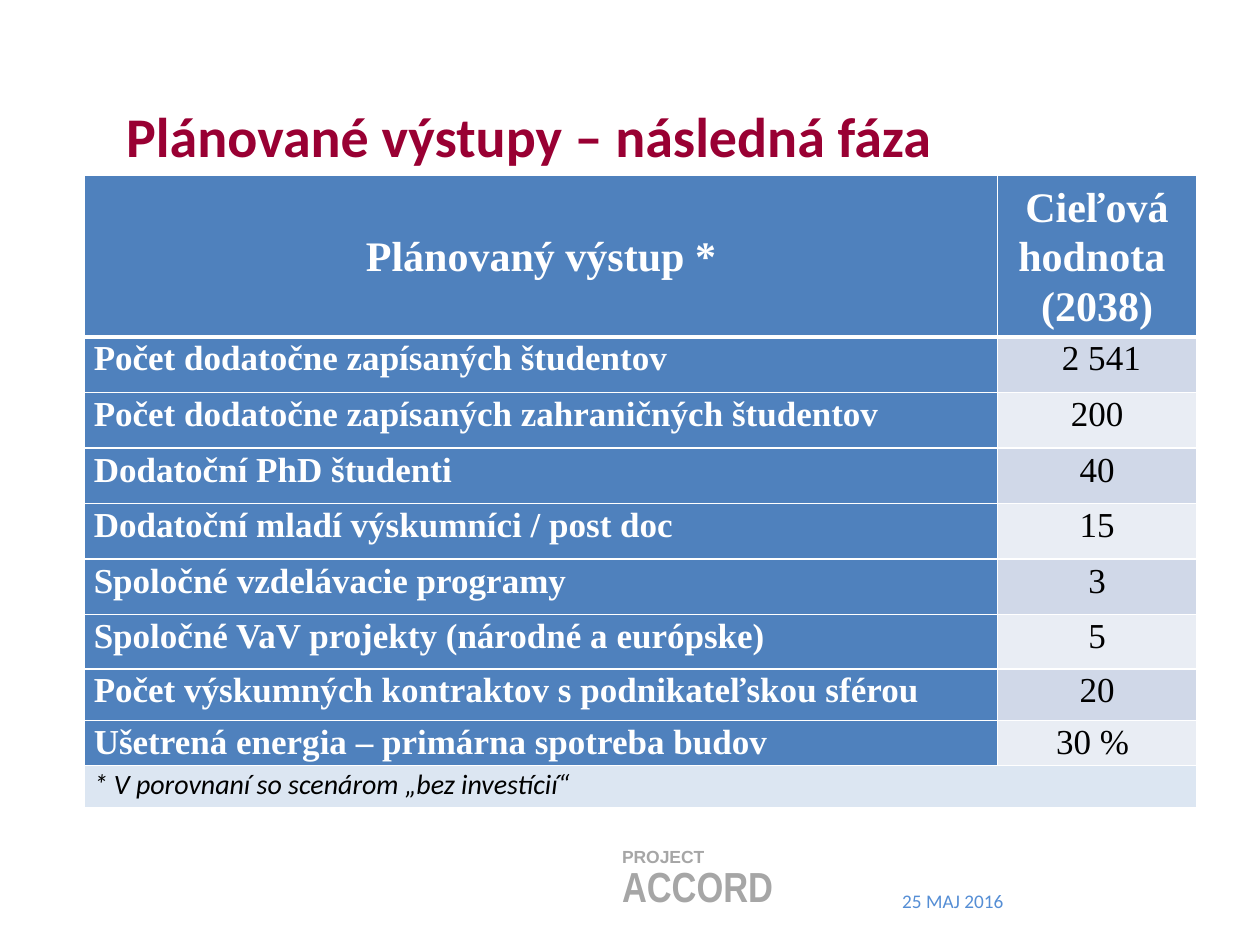
from dataclasses import dataclass

from lxml import etree
from pptx import Presentation
from pptx.dml.color import RGBColor
from pptx.enum.text import MSO_ANCHOR, MSO_AUTO_SIZE, PP_ALIGN
from pptx.oxml.ns import qn
from pptx.util import Cm, Pt

LEFT, CENTER = PP_ALIGN.LEFT, PP_ALIGN.CENTER
TOP, MIDDLE = MSO_ANCHOR.TOP, MSO_ANCHOR.MIDDLE
GROW = MSO_AUTO_SIZE.SHAPE_TO_FIT_TEXT
TITLE_ONLY = 5


@dataclass(frozen=True)
class Style:
    size: float
    face: str
    color: str
    bold: bool = False
    italic: bool = False


@dataclass(frozen=True)
class Theme:
    title: Style = Style(32, "Calibri", "990033", bold=True)
    header: Style = Style(24, "Times New Roman", "FFFFFF", bold=True)
    output: Style = Style(20, "Times New Roman", "FFFFFF", bold=True)
    target: Style = Style(20, "Times New Roman", "000000")
    footnote: Style = Style(16, "Calibri", "000000", italic=True)
    date: Style = Style(11, "Calibri", "558ED5")
    project: Style = Style(10, "Arial", "A6A6A6", bold=True)
    acronym: Style = Style(24, "Arial Narrow", "A6A6A6", bold=True)
    strong_fill: str = "4F81BD"
    band_fills: tuple = ("D0D8E8", "E9EDF4")
    footnote_fill: str = "DCE6F2"
    border: str = "FFFFFF"


@dataclass(frozen=True)
class Box:
    left: float
    top: float
    width: float
    height: float

    def emu(self):
        return Cm(self.left), Cm(self.top), Cm(self.width), Cm(self.height)


THEME = Theme()
HEADER = ("Plánovaný výstup *", "Cieľová hodnota \n(2038)")
OUTPUTS = (
    ("Počet dodatočne zapísaných študentov", " 2 541"),
    ("Počet dodatočne zapísaných zahraničných študentov", "200"),
    ("Dodatoční PhD študenti", "40"),
    ("Dodatoční mladí výskumníci / post doc", "15"),
    ("Spoločné vzdelávacie programy", "3"),
    ("Spoločné VaV projekty (národné a európske)", "5"),
    ("Počet výskumných kontraktov s podnikateľskou sférou", "20"),
    ("Ušetrená energia – primárna spotreba budov", "30 % "),
)
FOOTNOTE = "* V porovnaní so scenárom „bez investícií“"
ROW_HEIGHTS = (2.67, *[1.12] * 5, 1.09, 1.04, 0.89, 0.86)
TARGET_WIDTH = 4.01


def write(paragraph, text, style, align=LEFT, spacing=None):
    paragraph.text = text
    paragraph.alignment = align
    if spacing:
        paragraph.line_spacing = spacing
    font = paragraph.font
    font.size, font.name = Pt(style.size), style.face
    font.bold, font.italic = style.bold, style.italic
    font.color.rgb = RGBColor.from_string(style.color)


def add_border(cell, side, points):
    line = etree.SubElement(cell._tc.get_or_add_tcPr(), qn(f"a:ln{side}"), w=str(Pt(points)))
    fill = etree.SubElement(line, qn("a:solidFill"))
    etree.SubElement(fill, qn("a:srgbClr"), val=THEME.border)


def fill_cell(cell, text, style, fill, align=LEFT, anchor=TOP, top_line=1, bottom_line=1):
    cell.margin_left = cell.margin_right = Cm(0.19)
    cell.margin_top = cell.margin_bottom = 0
    cell.vertical_anchor = anchor
    for side, points in (("L", 1), ("R", 1), ("T", top_line), ("B", bottom_line)):
        add_border(cell, side, points)
    cell.fill.solid()
    cell.fill.fore_color.rgb = RGBColor.from_string(fill)
    write(cell.text_frame.paragraphs[0], text, style, align, 1.07)


def add_title(slide, box):
    title = slide.shapes.title
    title.left, title.top, title.width, title.height = box.emu()
    title.text_frame.vertical_anchor = MIDDLE
    write(title.text_frame.paragraphs[0], "Plánované výstupy – následná fáza", THEME.title)


def add_outputs(slide, box):
    table = slide.shapes.add_table(len(ROW_HEIGHTS), 2, *box.emu()).table
    table.columns[0].width = Cm(box.width - TARGET_WIDTH)
    table.columns[1].width = Cm(TARGET_WIDTH)
    for row, height in zip(table.rows, ROW_HEIGHTS):
        row.height = Cm(height)

    for column, heading in enumerate(HEADER):
        fill_cell(table.cell(0, column), heading, THEME.header, THEME.strong_fill,
                  CENTER, MIDDLE, bottom_line=3)
    for index, (output, target) in enumerate(OUTPUTS):
        top_line = 1 if index else 3
        fill_cell(table.cell(index + 1, 0), output, THEME.output, THEME.strong_fill,
                  top_line=top_line)
        fill_cell(table.cell(index + 1, 1), target, THEME.target, THEME.band_fills[index % 2],
                  CENTER, top_line=top_line)

    last = len(ROW_HEIGHTS) - 1
    footnote = table.cell(last, 0)
    footnote.merge(table.cell(last, 1))
    fill_cell(footnote, FOOTNOTE, THEME.footnote, THEME.footnote_fill)


def add_label(slide, box, wrap):
    frame = slide.shapes.add_textbox(*box.emu()).text_frame
    frame.word_wrap = wrap
    frame.auto_size = GROW
    return frame


def add_project(slide, box):
    frame = add_label(slide, box, False)
    write(frame.paragraphs[0], "PROJECT", THEME.project)
    write(frame.add_paragraph(), "ACCORD", THEME.acronym, spacing=Pt(25))


def add_date(slide, box):
    frame = add_label(slide, box, True)
    write(frame.paragraphs[0], "25 MAJ 2016", THEME.date, CENTER)


def main():
    deck = Presentation()
    deck.slide_width, deck.slide_height = Cm(25.4), Cm(19.05)
    slide = deck.slides.add_slide(deck.slide_layouts[TITLE_ONLY])
    add_date(slide, Box(17.32, 17.81, 3.78, 0.74))
    add_project(slide, Box(12.29, 16.94, 3.61, 1.6))
    add_outputs(slide, Box(1.7, 3.53, 22.42, 12.75))
    add_title(slide, Box(2.29, 1.14, 21.84, 3.18))
    deck.save("out.pptx")


if __name__ == "__main__":
    main()
